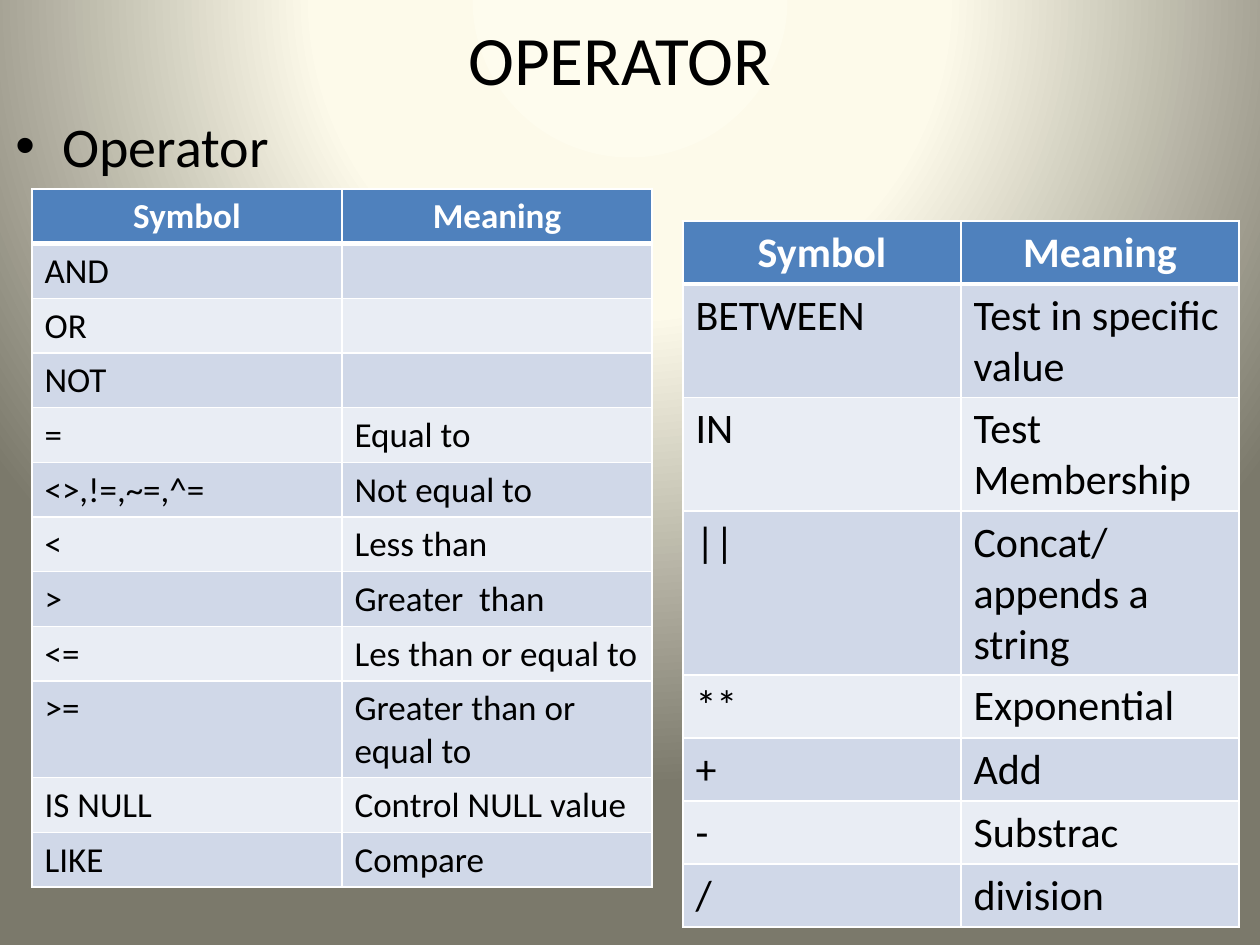
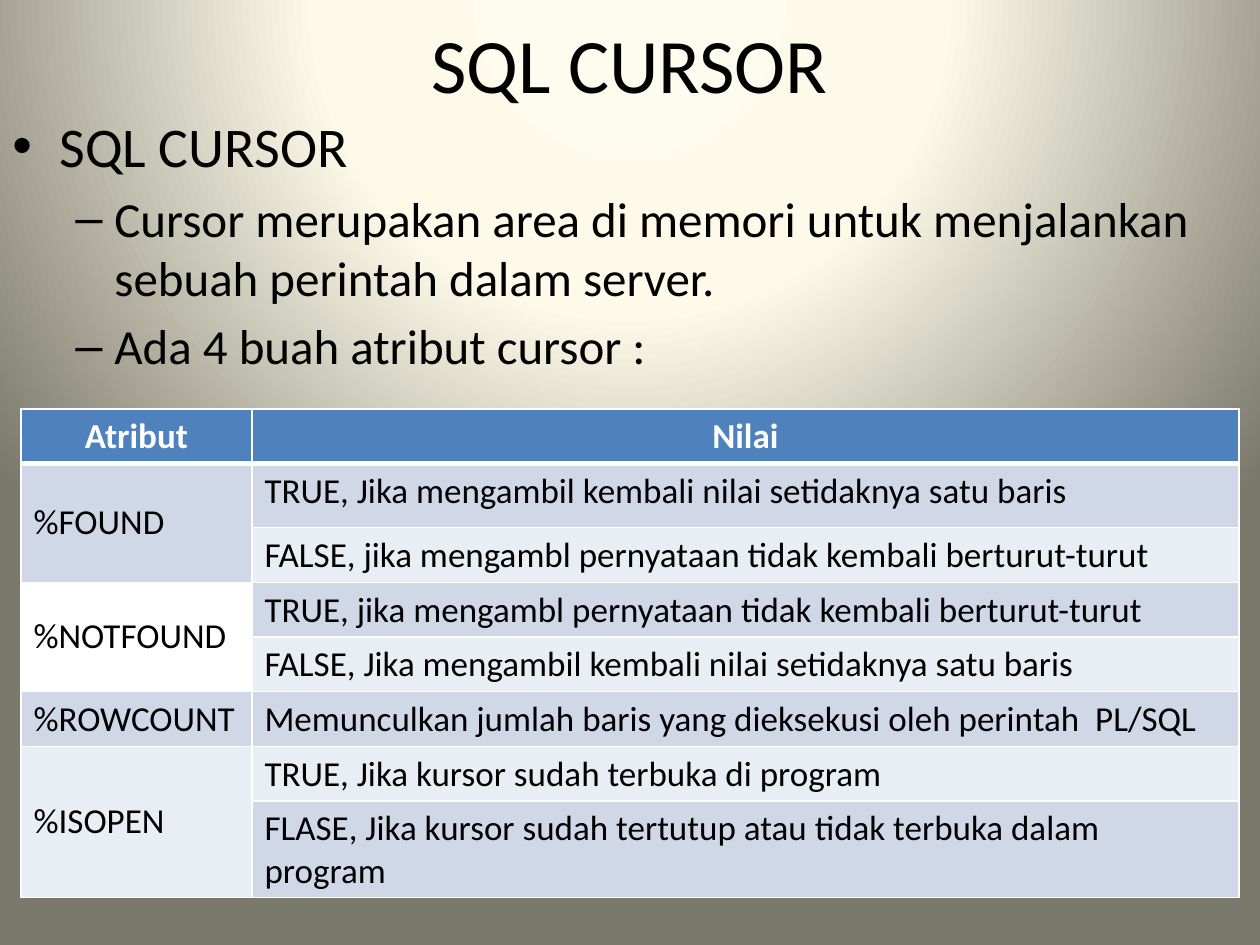
from dataclasses import dataclass, field

import lxml.etree
import pptx
import pptx.dml.color
import pptx.enum.text
import pptx.oxml
import pptx.oxml.ns
import pptx.presentation
import pptx.slide
import pptx.table
import pptx.text.text
import pptx.util

# Shared look
EMU_PER_PX = 914400 / 126
FONT = "Calibri"
RGBColor = pptx.dml.color.RGBColor
BLACK = RGBColor(0x00, 0x00, 0x00)
WHITE = RGBColor(0xFF, 0xFF, 0xFF)
HEADER_BLUE = RGBColor(0x4F, 0x81, 0xBD)
BAND_DARK = RGBColor(0xD0, 0xD8, 0xE8)
BAND_LIGHT = RGBColor(0xE9, 0xED, 0xF4)
GLOW_CENTRE = RGBColor(0xFE, 0xFC, 0xEE)
GLOW_MIDDLE = RGBColor(0xFD, 0xFA, 0xEA)
GLOW_EDGE = RGBColor(0x7B, 0x79, 0x6B)
GLOW_STOPS = ((0, GLOW_CENTRE), (40, GLOW_MIDDLE), (100, GLOW_EDGE))
LEFT = pptx.enum.text.PP_ALIGN.LEFT
CENTER = pptx.enum.text.PP_ALIGN.CENTER
MIDDLE = pptx.enum.text.MSO_ANCHOR.MIDDLE
TOP = pptx.enum.text.MSO_ANCHOR.TOP
THIN, THICK = 1, 3


@dataclass(frozen=True)
class Box:
    left: int
    top: int
    width: int
    height: int


@dataclass(frozen=True)
class BulletLevel:
    mark: str
    size: float
    margin: int
    hanging: int


@dataclass(frozen=True)
class TableSpec:
    """Rows start with the header; None continues the cell above."""
    left: int
    top: int
    columns: tuple[int, ...]
    row_heights: list[int]
    size: float
    rows: list[tuple[str | None, str]]
    special_fills: dict[tuple[int, int], RGBColor] = field(default_factory=dict)


BULLET_LEVELS = (BulletLevel("•", 32, 47, 47), BulletLevel("–", 28, 102, 39))


def px(length: int) -> pptx.util.Emu:
    return pptx.util.Emu(round(length * EMU_PER_PX))


def drawing_tag(name: str) -> str:
    return pptx.oxml.ns.qn(f"a:{name}")


def add_run(paragraph: pptx.text.text._Paragraph, text: str, size: float,
            color: RGBColor = BLACK, bold: bool = False) -> None:
    run = paragraph.add_run()
    run.text = text
    run.font.name = FONT
    run.font.size = pptx.util.Pt(size)
    run.font.bold = bold
    run.font.color.rgb = color


def set_glow_background(presentation: pptx.presentation.Presentation) -> None:
    master = presentation.slide_master
    master.background.fill.solid()
    solid = next(master.element.iter(drawing_tag("solidFill")))
    stops = "".join(f'<a:gs pos="{percent * 1000}"><a:srgbClr val="{color}"/></a:gs>'
                    for percent, color in GLOW_STOPS)
    gradient = pptx.oxml.parse_xml(
        f'<a:gradFill {pptx.oxml.ns.nsdecls("a")} rotWithShape="1"><a:gsLst>{stops}</a:gsLst>'
        '<a:path path="circle"><a:fillToRect l="50000" t="-80000" r="50000" b="180000"/>'
        '</a:path></a:gradFill>')
    solid.getparent().replace(solid, gradient)


def add_text_frame(slide: pptx.slide.Slide, box: Box) -> pptx.text.text.TextFrame:
    shape = slide.shapes.add_textbox(px(box.left), px(box.top), px(box.width), px(box.height))
    shape.text_frame.word_wrap = True
    return shape.text_frame


def add_title(slide: pptx.slide.Slide, box: Box, text: str, size: float) -> None:
    frame = add_text_frame(slide, box)
    frame.vertical_anchor = MIDDLE
    paragraph = frame.paragraphs[0]
    paragraph.alignment = CENTER
    add_run(paragraph, text, size)


def add_bullets(slide: pptx.slide.Slide, box: Box, items: list[tuple[int, str]]) -> None:
    frame = add_text_frame(slide, box)
    for index, (level_number, text) in enumerate(items):
        level = BULLET_LEVELS[level_number]
        paragraph = frame.add_paragraph() if index else frame.paragraphs[0]
        paragraph.level = level_number
        paragraph.space_before = pptx.util.Pt(level.size * 0.2)
        add_run(paragraph, text, level.size)
        properties = paragraph._p.get_or_add_pPr()
        properties.set("marL", str(px(level.margin)))
        properties.set("indent", str(-px(level.hanging)))
        font = lxml.etree.SubElement(properties, drawing_tag("buFont"))
        font.set("typeface", "Arial")
        mark = lxml.etree.SubElement(properties, drawing_tag("buChar"))
        mark.set("char", level.mark)


def set_borders(cell: pptx.table._Cell, top: int, bottom: int) -> None:
    properties = cell._tc.get_or_add_tcPr()
    widths = {"lnL": THIN, "lnR": THIN, "lnT": top, "lnB": bottom}
    for position, (side, width) in enumerate(widths.items()):
        line = pptx.oxml.parse_xml(
            f'<a:{side} {pptx.oxml.ns.nsdecls("a")} w="{pptx.util.Pt(width)}">'
            f'<a:solidFill><a:srgbClr val="{WHITE}"/></a:solidFill></a:{side}>')
        properties.insert(position, line)


def add_banded_table(slide: pptx.slide.Slide, spec: TableSpec) -> None:
    table = slide.shapes.add_table(
        len(spec.rows), len(spec.columns), px(spec.left), px(spec.top),
        px(sum(spec.columns)), px(sum(spec.row_heights))).table
    table.first_row = table.horz_banding = False
    for column, width in zip(table.columns, spec.columns):
        column.width = px(width)
    for row, height in zip(table.rows, spec.row_heights):
        row.height = px(height)

    for row_index, texts in enumerate(spec.rows):
        header = row_index == 0
        band = HEADER_BLUE if header else BAND_DARK if row_index % 2 else BAND_LIGHT
        for column_index, text in enumerate(texts):
            cell = table.cell(row_index, column_index)
            cell.fill.solid()
            cell.fill.fore_color.rgb = spec.special_fills.get((row_index, column_index), band)
            set_borders(cell, THICK if row_index == 1 else THIN, THICK if header else THIN)
            if text is None:
                above = table.cell(row_index - 1, column_index)
                above.merge(cell)
                above.vertical_anchor = MIDDLE
                continue
            cell.vertical_anchor = TOP
            paragraph = cell.text_frame.paragraphs[0]
            paragraph.alignment = CENTER if header else LEFT
            if text:
                add_run(paragraph, text, spec.size, WHITE if header else BLACK, header)


# Slide contents
COMPARISON_TABLE = TableSpec(32, 189, (310, 310), [44] * 12, 20, [
    ("Symbol", "Meaning"),
    ("AND", ""),
    ("OR", ""),
    ("NOT", ""),
    ("=", "Equal to"),
    ("<>,!=,~=,^=", "Not equal to"),
    ("<", "Less than"),
    (">", "Greater  than"),
    ("<=", "Les than or equal to"),
    (">=", "Greater than or equal to"),
    ("IS NULL", "Control NULL value"),
    ("LIKE", "Compare"),
])
ARITHMETIC_TABLE = TableSpec(683, 221, (278, 278), [20] + [52] * 7, 24, [
    ("Symbol", "Meaning"),
    ("BETWEEN", "Test in specific value"),
    ("IN", "Test Membership"),
    ("||", "Concat/appends a string"),
    ("**", "Exponential"),
    ("+", "Add"),
    ("-", "Substrac"),
    ("/", "division"),
])
CURSOR_TABLE = TableSpec(21, 409, (231, 987), [52, 64] + [52] * 6, 20, [
    ("Atribut", "Nilai"),
    ("%FOUND", "TRUE, Jika mengambil kembali nilai setidaknya satu baris"),
    (None, "FALSE, jika mengambl pernyataan tidak kembali berturut-turut"),
    ("%NOTFOUND", "TRUE, jika mengambl pernyataan tidak kembali berturut-turut"),
    (None, "FALSE, Jika mengambil kembali nilai setidaknya satu baris"),
    ("%ROWCOUNT", "Memunculkan jumlah baris yang dieksekusi oleh perintah  PL/SQL"),
    ("%ISOPEN", "TRUE, Jika kursor sudah terbuka di program"),
    (None, "FLASE, Jika kursor sudah tertutup atau tidak terbuka dalam program"),
], {(3, 0): WHITE})


def build_operator_slide(slide: pptx.slide.Slide) -> None:
    add_title(slide, Box(53, 10, 1134, 95), "OPERATOR", 39.6)
    add_bullets(slide, Box(3, 105, 1134, 624), [(0, "Operator")])
    add_banded_table(slide, COMPARISON_TABLE)
    add_banded_table(slide, ARITHMETIC_TABLE)


def build_cursor_slide(slide: pptx.slide.Slide) -> None:
    add_title(slide, Box(63, 0, 1134, 126), "SQL CURSOR", 44)
    add_bullets(slide, Box(0, 105, 1281, 740), [
        (0, "SQL CURSOR"),
        (1, "Cursor merupakan area di memori untuk menjalankan sebuah perintah dalam server."),
        (1, "Ada 4 buah atribut cursor :"),
    ])
    add_banded_table(slide, CURSOR_TABLE)


def main() -> None:
    presentation = pptx.Presentation()
    presentation.slide_width, presentation.slide_height = px(1260), px(945)
    set_glow_background(presentation)
    blank_layout = presentation.slide_layouts[6]
    for build in (build_operator_slide, build_cursor_slide):
        build(presentation.slides.add_slide(blank_layout))
    presentation.save("out.pptx")


if __name__ == "__main__":
    main()
